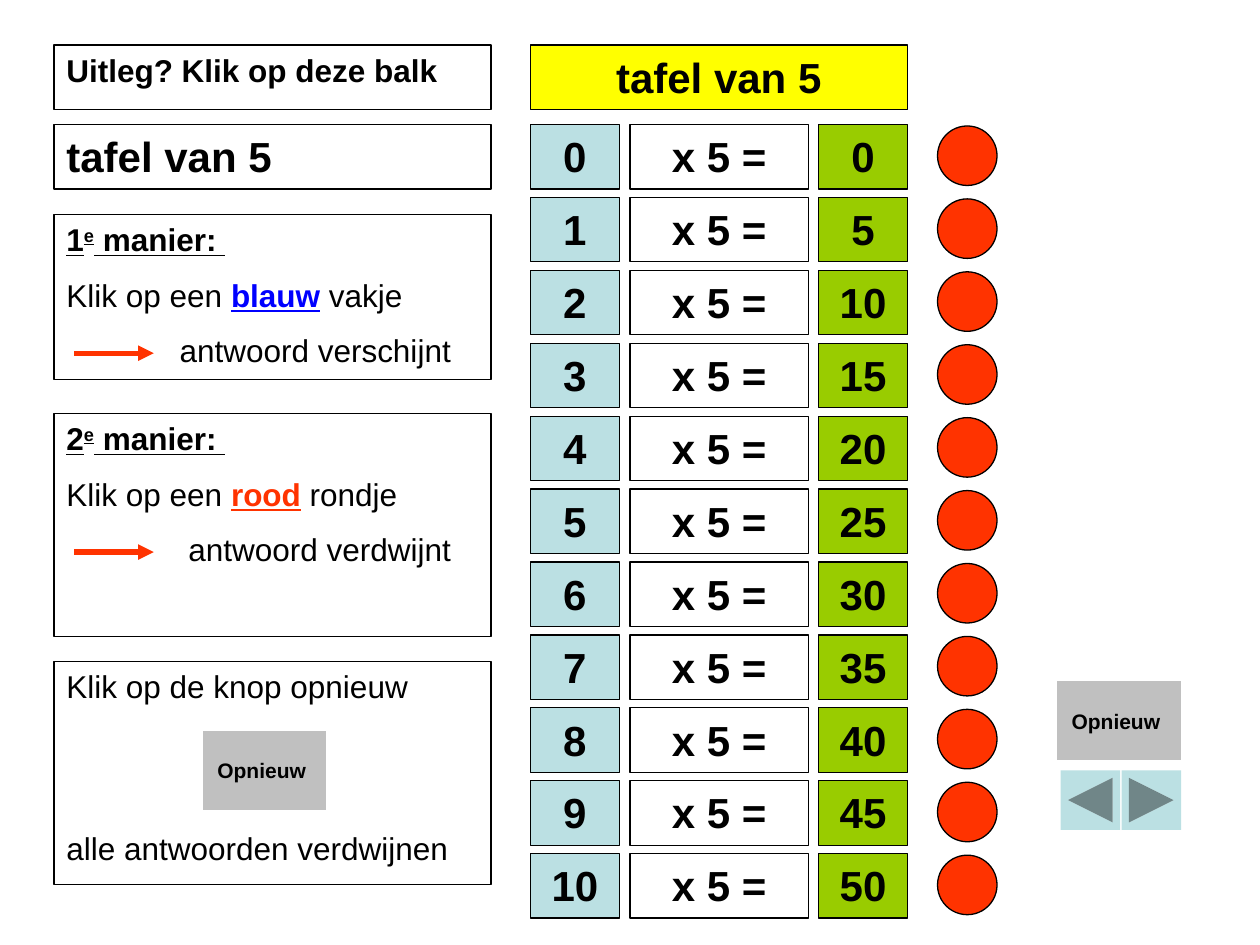
import pptx
import pptx.dml.color
import pptx.enum.shapes
import pptx.enum.text
import pptx.oxml.ns
import pptx.util
from lxml import etree

Cm, Pt = pptx.util.Cm, pptx.util.Pt
RGBColor = pptx.dml.color.RGBColor
Kind = pptx.enum.shapes.MSO_SHAPE
Align = pptx.enum.text.PP_ALIGN
Anchor = pptx.enum.text.MSO_ANCHOR
qn = pptx.oxml.ns.qn

BLACK = RGBColor(0x00, 0x00, 0x00)
WHITE = RGBColor(0xFF, 0xFF, 0xFF)
GREEN = RGBColor(0x99, 0xCC, 0x00)
PALE_BLUE = RGBColor(0xBB, 0xE0, 0xE3)
YELLOW = RGBColor(0xFF, 0xFF, 0x00)
RED = RGBColor(0xFF, 0x33, 0x00)
BLUE = RGBColor(0x00, 0x00, 0xFF)
GREY = RGBColor(0xC0, 0xC0, 0xC0)

TABLE_OF = 5
ROW_COUNT = 11
FIRST_ROW, ROW_STEP = 2.51, 1.47
BAR_HEIGHT = 1.3
LEFT, LEFT_WIDTH = 1.09, 8.81
TABLE_LEFT = 10.69


def add_shape(page, kind, left, top, width, height, fill=None, outlined=True):
    shape = page.shapes.add_shape(kind, Cm(left), Cm(top), Cm(width), Cm(height))
    shape.shadow.inherit = False
    if fill is None:
        shape.fill.background()
    else:
        shape.fill.solid()
        shape.fill.fore_color.rgb = fill
    if outlined:
        shape.line.color.rgb = BLACK
        shape.line.width = Pt(0.75)
    else:
        shape.line.fill.background()
    return shape


def add_span(para, text, size, bold=False, underline=False, color=BLACK, raised=False):
    span = para.add_run()
    span.text = text
    font = span.font
    font.name, font.size = "Arial", Pt(size)
    font.bold, font.underline = bold, underline
    font.color.rgb = color
    if raised:
        font._element.set("baseline", "30000")


def start_para(box, align=Align.LEFT, before=0, indent=0):
    """Use the empty first paragraph, or add one below the text so far."""
    frame = box.text_frame
    para = frame.paragraphs[0]
    if para.runs:
        para = frame.add_paragraph()
    para.alignment = align
    para.space_before = Pt(before)
    if indent:
        para._p.get_or_add_pPr().set("marL", str(Cm(indent)))
    return para


def add_text_box(page, left, top, width, height, fill=None):
    box = add_shape(page, Kind.RECTANGLE, left, top, width, height, fill)
    box.text_frame.word_wrap = True
    box.text_frame.vertical_anchor = Anchor.TOP
    return box


def add_bar(page, left, top, width, text, fill=None, align=Align.CENTER, size=24):
    box = add_text_box(page, left, top, width, BAR_HEIGHT, fill)
    add_span(start_para(box, align), text, size, bold=True)


def add_arrow(page, top):
    arrow = page.shapes.add_connector(
        pptx.enum.shapes.MSO_CONNECTOR.STRAIGHT, Cm(1.5), Cm(top), Cm(3.1), Cm(top))
    arrow.line.color.rgb = RED
    arrow.line.width = Pt(3)
    etree.SubElement(arrow.line._get_or_add_ln(), qn("a:tailEnd"), type="triangle")
    etree.SubElement(arrow._element.spPr, qn("a:effectLst"))


def add_method(page, top, height, number, color_word, color, target, result, indent):
    box = add_text_box(page, LEFT, top, LEFT_WIDTH, height)
    heading = start_para(box)
    add_span(heading, number, 18, True, True)
    add_span(heading, "e", 18, True, True, raised=True)
    add_span(heading, " manier: ", 18, True, True)

    action = start_para(box, before=10)
    add_span(action, "Klik op een ", 18)
    add_span(action, color_word, 18, True, True, color)
    add_span(action, target, 18)

    add_span(start_para(box, before=10, indent=indent), result, 18)
    add_arrow(page, top + 2.8)


def add_reset_button(page, left, top):
    button = add_shape(page, Kind.ACTION_BUTTON_CUSTOM, left, top, 2.49, 1.6,
                       GREY, outlined=False)
    button.text_frame.word_wrap = False
    button.text_frame.vertical_anchor = Anchor.MIDDLE
    add_span(start_para(button, Align.CENTER), "Opnieuw ", 12, bold=True)


def add_explanation(page):
    add_bar(page, LEFT, 0.91, LEFT_WIDTH, "Uitleg? Klik op deze balk",
            align=Align.LEFT, size=18)
    add_bar(page, LEFT, FIRST_ROW, LEFT_WIDTH, f"tafel van {TABLE_OF}", align=Align.LEFT)
    add_method(page, 4.32, 3.33, "1", "blauw", BLUE, " vakje",
               "antwoord verschijnt", 2.28)
    add_method(page, 8.33, 4.5, "2", "rood", RED, " rondje",
               "antwoord verdwijnt", 2.46)

    # The wide gap leaves room for the button
    box = add_text_box(page, LEFT, 13.33, LEFT_WIDTH, 4.5)
    add_span(start_para(box), "Klik op de knop opnieuw", 18)
    add_span(start_para(box, before=71), "alle antwoorden verdwijnen", 18)
    add_reset_button(page, 4.09, 14.73)


def add_times_table(page):
    add_bar(page, TABLE_LEFT, 0.91, 7.6, f"tafel van {TABLE_OF}", YELLOW)
    for factor in range(ROW_COUNT):
        top = FIRST_ROW + factor * ROW_STEP
        add_bar(page, TABLE_LEFT, top, 1.8, str(factor), PALE_BLUE)
        add_bar(page, 12.7, top, 3.6, f"x {TABLE_OF} =", WHITE)
        add_bar(page, 16.5, top, 1.8, str(factor * TABLE_OF), GREEN)
        add_shape(page, Kind.OVAL, 18.9, top + 0.03, 1.2, 1.2, RED)


def add_navigation(page):
    add_reset_button(page, 21.31, 13.73)
    for kind, left in ((Kind.ACTION_BUTTON_BACK_OR_PREVIOUS, 21.38),
                       (Kind.ACTION_BUTTON_FORWARD_OR_NEXT, 22.61)):
        add_shape(page, kind, left, 15.53, 1.2, 1.2, PALE_BLUE, outlined=False)


def main():
    deck = pptx.Presentation()
    deck.slide_width, deck.slide_height = Cm(25.4), Cm(19.05)
    page = deck.slides.add_slide(deck.slide_layouts[6])
    add_explanation(page)
    add_times_table(page)
    add_navigation(page)
    deck.save("out.pptx")


if __name__ == "__main__":
    main()
